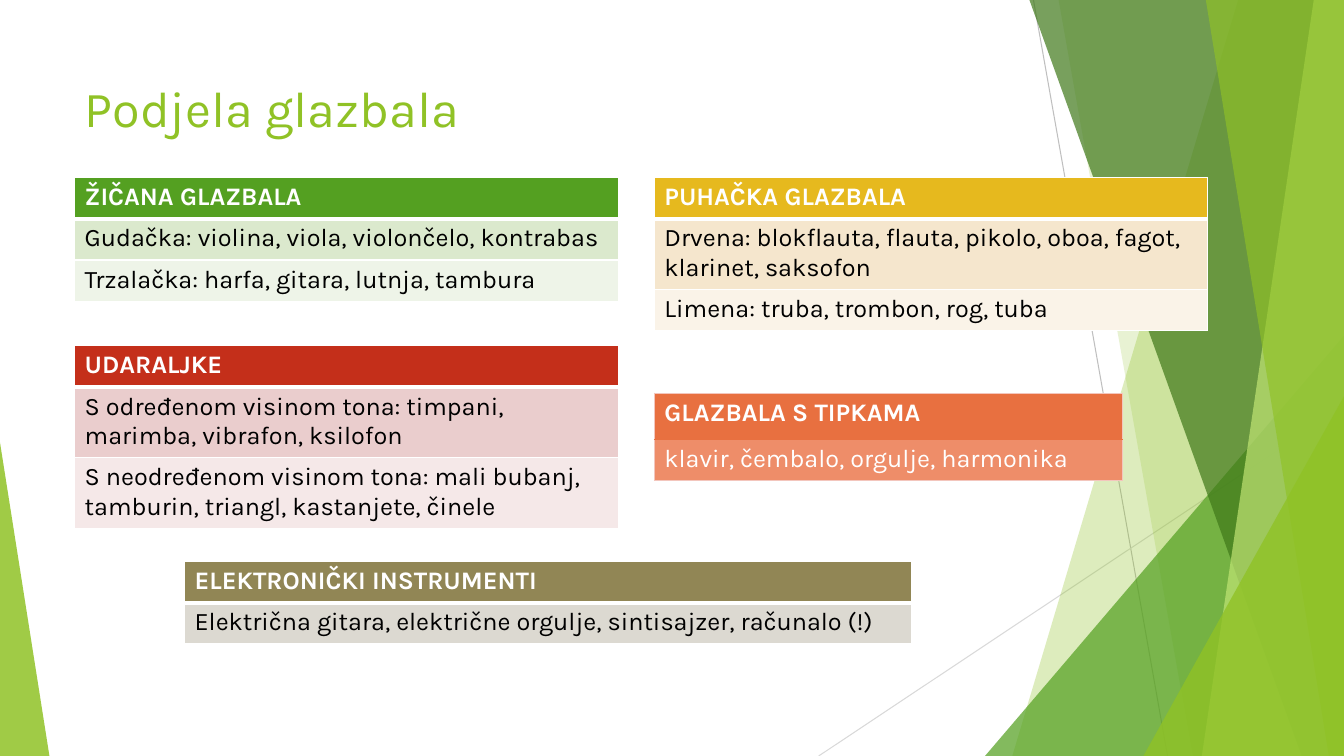
from lxml.etree import SubElement
from pptx import Presentation
from pptx.dml.color import RGBColor
from pptx.enum.shapes import MSO_CONNECTOR as Connector, MSO_SHAPE as Preset
from pptx.enum.text import MSO_ANCHOR as Anchor, PP_ALIGN as Align
from pptx.oxml.ns import qn
from pptx.util import Inches, Pt

WIDTH, HEIGHT = 13.33, 7.5
FONT = "Karla"
COLORS = {
    "lime": "90C226", "green": "54A021", "forest": "3F7819", "pale": "C0E474",
    "gray": "BFBFBF", "silver": "D9D9D9", "white": "FFFFFF", "black": "000000",
    "mint": "DBE9CD", "mint light": "EEF4E8",
    "red": "C42F1A", "rose": "EACDCD", "rose light": "F5E8E8",
    "gold": "E6B91E", "sand": "F5E6CD", "sand light": "FAF3E8",
    "orange": "E87040", "peach": "EE8D69", "blush": "F3C6BD",
    "olive": "918655", "stone": "DCD9D1",
}

TITLE = "Podjela glazbala"
LEFT, RIGHT, TOP = 0.74, 6.49, 1.76
LINE_ROW, DOUBLE_ROW = 0.41, 0.7
PLAIN = {"text": "black", "edge": "white", "rule": ("white", 3)}
TINTED = {"text": "white", "edge": "blush", "rule": ("orange", 1)}
GROUPS = [
    (LEFT, TOP, 5.4, PLAIN, [
        ("ŽIČANA GLAZBALA", "green", LINE_ROW),
        ("Gudačka: violina, viola, violončelo, kontrabas", "mint", LINE_ROW),
        ("Trzalačka: harfa, gitara, lutnja, tambura", "mint light", LINE_ROW)]),
    (LEFT, 3.43, 5.4, PLAIN, [
        ("UDARALJKE", "red", LINE_ROW),
        ("S određenom visinom tona: timpani, marimba, vibrafon, ksilofon", "rose", DOUBLE_ROW),
        ("S neodređenom visinom tona: mali bubanj, tamburin, triangl, kastanjete, činele",
         "rose light", DOUBLE_ROW)]),
    (RIGHT, TOP, 5.49, PLAIN, [
        ("PUHAČKA GLAZBALA", "gold", LINE_ROW),
        ("Drvena: blokflauta, flauta, pikolo, oboa, fagot, klarinet, saksofon", "sand", DOUBLE_ROW),
        ("Limena: truba, trombon, rog, tuba", "sand light", LINE_ROW)]),
    (RIGHT, 3.9, 4.64, TINTED, [
        ("GLAZBALA S TIPKAMA", "orange", 0.46),
        ("klavir, čembalo, orgulje, harmonika", "peach", LINE_ROW)]),
    (1.83, 5.57, 7.21, PLAIN, [
        ("ELEKTRONIČKI INSTRUMENTI", "olive", LINE_ROW),
        ("Električna gitara, električne orgulje, sintisajzer, računalo (!)", "stone", LINE_ROW)]),
]

RAYS = [((10.25, 0), (11.58, HEIGHT), "gray"), ((WIDTH, 4.03), (8.12, HEIGHT), "silver")]
FACETS = [
    ("band", 12.28, 10.04, "lime", 30),
    ("band", 10.5, 11.83, "lime", 20),
    ("triangle", 9.77, 3.33, 3.56, 1, "green", 72),
    ("band", 10.21, 12.91, "forest", 70),
    ("band", 13.03, 11.92, "pale", 70),
    ("band", 11.96, 13.18, "lime", 65),
    ("triangle", 11.34, 3.93, 1.99, 1, "lime", 80),
    ("triangle", 0, 4.39, 0.49, 0, "lime", 85),
]


def rgb(name):
    return RGBColor.from_string(COLORS[name])


def write(frame, text, size=18, color="black", bold=False):
    para = frame.paragraphs[0]
    para.alignment = Align.LEFT
    span = para.add_run()
    span.text = text
    font = span.font
    font.name, font.size, font.bold = FONT, Pt(size), bold
    font.color.rgb = rgb(color)


def add_ray(page, start, end, color):
    ray = page.shapes.add_connector(Connector.STRAIGHT, *map(Inches, start + end))
    ray.line.color.rgb = rgb(color)
    ray.line.width = Pt(0.75)
    SubElement(ray._element.spPr, qn("a:effectLst"))


def add_band(page, top_x, bottom_x):
    corners = [(WIDTH, 0), (WIDTH, HEIGHT), (bottom_x, HEIGHT)]
    builder = page.shapes.build_freeform(Inches(top_x), 0)
    builder.add_line_segments([(Inches(x), Inches(y)) for x, y in corners], close=True)
    return builder.convert_to_shape()


def add_triangle(page, left, top, width, apex):
    shape = page.shapes.add_shape(
        Preset.ISOSCELES_TRIANGLE, *map(Inches, (left, top, width, HEIGHT - top)))
    shape.adjustments[0] = apex
    return shape


def paint(shape, color, opacity):
    shape.shadow.inherit = False
    shape.line.fill.background()
    shape.fill.solid()
    shape.fill.fore_color.rgb = rgb(color)
    tone = shape._element.spPr.find(qn("a:solidFill"))[0]
    SubElement(tone, qn("a:alpha"), val=str(opacity * 1000))


def add_border(cell, side, color, width):
    line = SubElement(cell._tc.get_or_add_tcPr(), qn("a:ln" + side), w=str(Pt(width)))
    fill = SubElement(line, qn("a:solidFill"))
    SubElement(fill, qn("a:srgbClr"), val=COLORS[color])


def add_group(page, left, top, width, style, rows):
    height = sum(row[2] for row in rows)
    table = page.shapes.add_table(
        len(rows), 1, *map(Inches, (left, top, width, height))).table
    table.first_row = table.horz_banding = False
    edge = (style["edge"], 1)
    for index, (text, color, row_height) in enumerate(rows):
        table.rows[index].height = Inches(row_height)
        cell = table.cell(index, 0)
        header = index == 0
        borders = {
            "L": edge, "R": edge,
            "T": style["rule"] if index == 1 else edge,
            "B": style["rule"] if header else edge,
        }
        for side, border in borders.items():
            add_border(cell, side, *border)
        cell.fill.solid()
        cell.fill.fore_color.rgb = rgb(color)
        write(cell.text_frame, text, color="white" if header else style["text"], bold=header)


def main():
    deck = Presentation()
    deck.slide_width, deck.slide_height = Inches(WIDTH), Inches(HEIGHT)
    page = deck.slides.add_slide(deck.slide_layouts[5])
    for ray in RAYS:
        add_ray(page, *ray)
    makers = {"band": add_band, "triangle": add_triangle}
    for kind, *place, color, opacity in FACETS:
        paint(makers[kind](page, *place), color, opacity)
    title = page.shapes.title
    title.left, title.top, title.width, title.height = map(Inches, (LEFT, 0.67, 9.4, 0.79))
    title.text_frame.vertical_anchor = Anchor.MIDDLE
    write(title.text_frame, TITLE, size=36, color="lime")
    for group in GROUPS:
        add_group(page, *group)
    deck.save("out.pptx")


if __name__ == "__main__":
    main()
